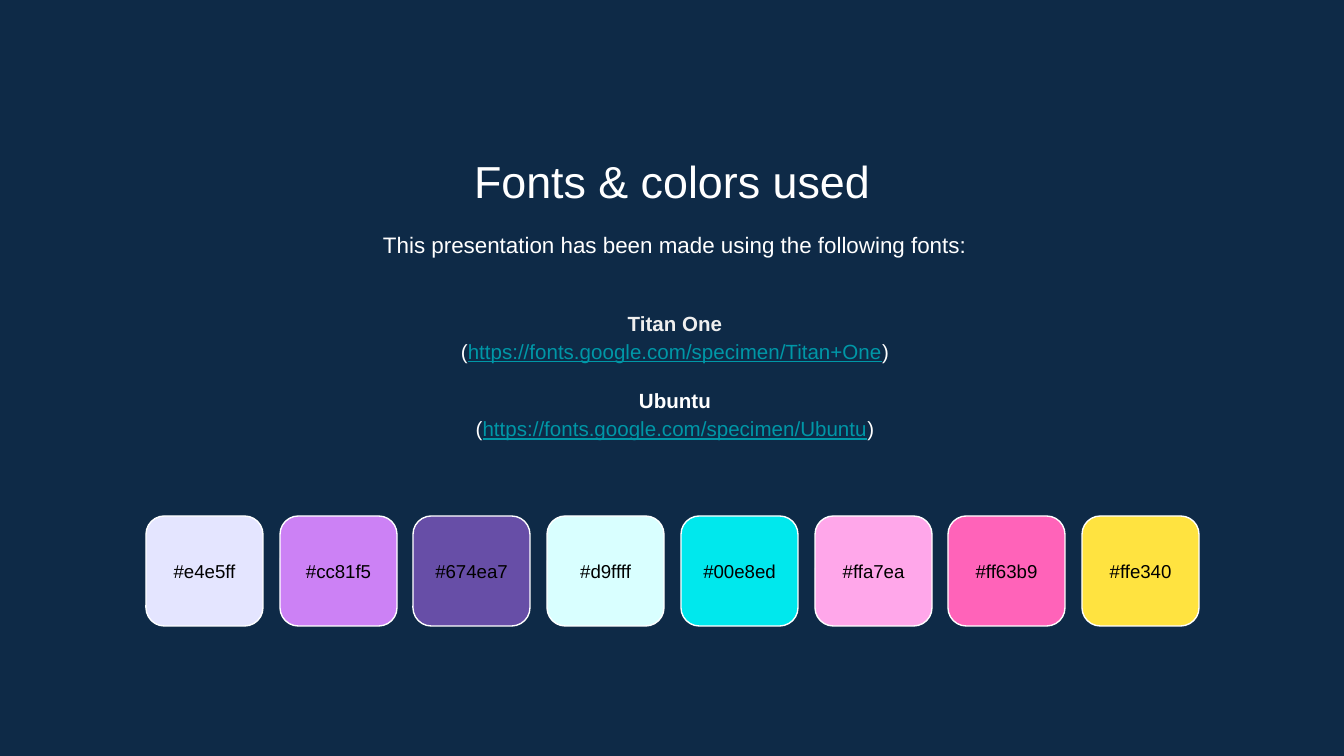
from pptx import Presentation
from pptx.dml.color import RGBColor
from pptx.enum.shapes import MSO_SHAPE
from pptx.enum.text import MSO_ANCHOR, PP_ALIGN
from pptx.util import Emu, Inches, Pt

PX_PER_INCH = 134.4
FONT = "Arial"
COLORS = {
    "background": "0E2A47",
    "white": "FFFFFF",
    "soft_white": "EFEFEF",
    "link": "0097A7",
    "black": "000000",
}
SWATCHES = ["e4e5ff", "cc81f5", "674ea7", "d9ffff",
            "00e8ed", "ffa7ea", "ff63b9", "ffe340"]
FONT_LINKS = [
    ("Titan One", "soft_white", "https://fonts.google.com/specimen/Titan+One"),
    ("Ubuntu", "white", "https://fonts.google.com/specimen/Ubuntu"),
]


def px(n):
    return Emu(round(n * 914400 / PX_PER_INCH))


def rgb(name):
    return RGBColor.from_string(COLORS[name])


def add_box(slide, x, y, w, h, anchor):
    tf = slide.shapes.add_textbox(px(x), px(y), px(w), px(h)).text_frame
    tf.word_wrap = True
    tf.vertical_anchor = anchor
    tf.margin_left = tf.margin_right = Inches(0.1)
    tf.margin_top = tf.margin_bottom = Inches(0.1)
    return tf


def style(p, size, color, bold=False, spacing=None):
    p.alignment = PP_ALIGN.CENTER
    p.line_spacing = spacing
    p.font.name = FONT
    p.font.size = Pt(size)
    p.font.bold = bold
    p.font.color.rgb = rgb(color)


def add_label(slide, x, y, w, h, text, size, color,
              anchor=MSO_ANCHOR.TOP, spacing=None):
    p = add_box(slide, x, y, w, h, anchor).paragraphs[0]
    p.text = text
    style(p, size, color, spacing=spacing)


def add_font_list(slide, x, y, w, h):
    tf = add_box(slide, x, y, w, h, MSO_ANCHOR.MIDDLE)
    for i, (name, color, url) in enumerate(FONT_LINKS):
        p = tf.add_paragraph() if i else tf.paragraphs[0]
        p.text = name
        style(p, 11, color, bold=True, spacing=1.15)
        if i:
            p.space_before = Pt(11)

        p = tf.add_paragraph()
        style(p, 11, "white", spacing=1.15)
        for text in ("(", url, ")"):
            r = p.add_run()
            r.text = text
            if text == url:
                r.font.underline = True
                r.font.color.rgb = rgb("link")


def add_swatch(slide, x, y, w, h, code):
    sp = slide.shapes.add_shape(MSO_SHAPE.ROUNDED_RECTANGLE,
                                px(x), px(y), px(w), px(h))
    sp.shadow.inherit = False
    sp.fill.solid()
    sp.fill.fore_color.rgb = RGBColor.from_string(code.upper())
    sp.line.color.rgb = rgb("white")
    sp.line.width = Pt(0.75)
    label_h = 64
    add_label(slide, x, y + (h - label_h) // 2, w, label_h, f"#{code}", 10,
              "black", MSO_ANCHOR.MIDDLE)


def main():
    prs = Presentation()
    prs.slide_width, prs.slide_height = px(1344), px(756)
    slide = prs.slides.add_slide(prs.slide_layouts[6])
    slide.background.fill.solid()
    slide.background.fill.fore_color.rgb = rgb("background")

    add_label(slide, 154, 140, 1036, 71, "Fonts & colors used", 24, "white")
    add_label(slide, 157, 214, 1036, 64,
              "This presentation has been made using the following fonts:",
              12, "white", spacing=1.15)
    add_font_list(slide, 157, 282, 1036, 184)

    first, last = 146, 1082
    for i, code in enumerate(SWATCHES):
        x = first + round(i * (last - first) / (len(SWATCHES) - 1))
        add_swatch(slide, x, 516, 117, 110, code)

    prs.save("out.pptx")


if __name__ == "__main__":
    main()
